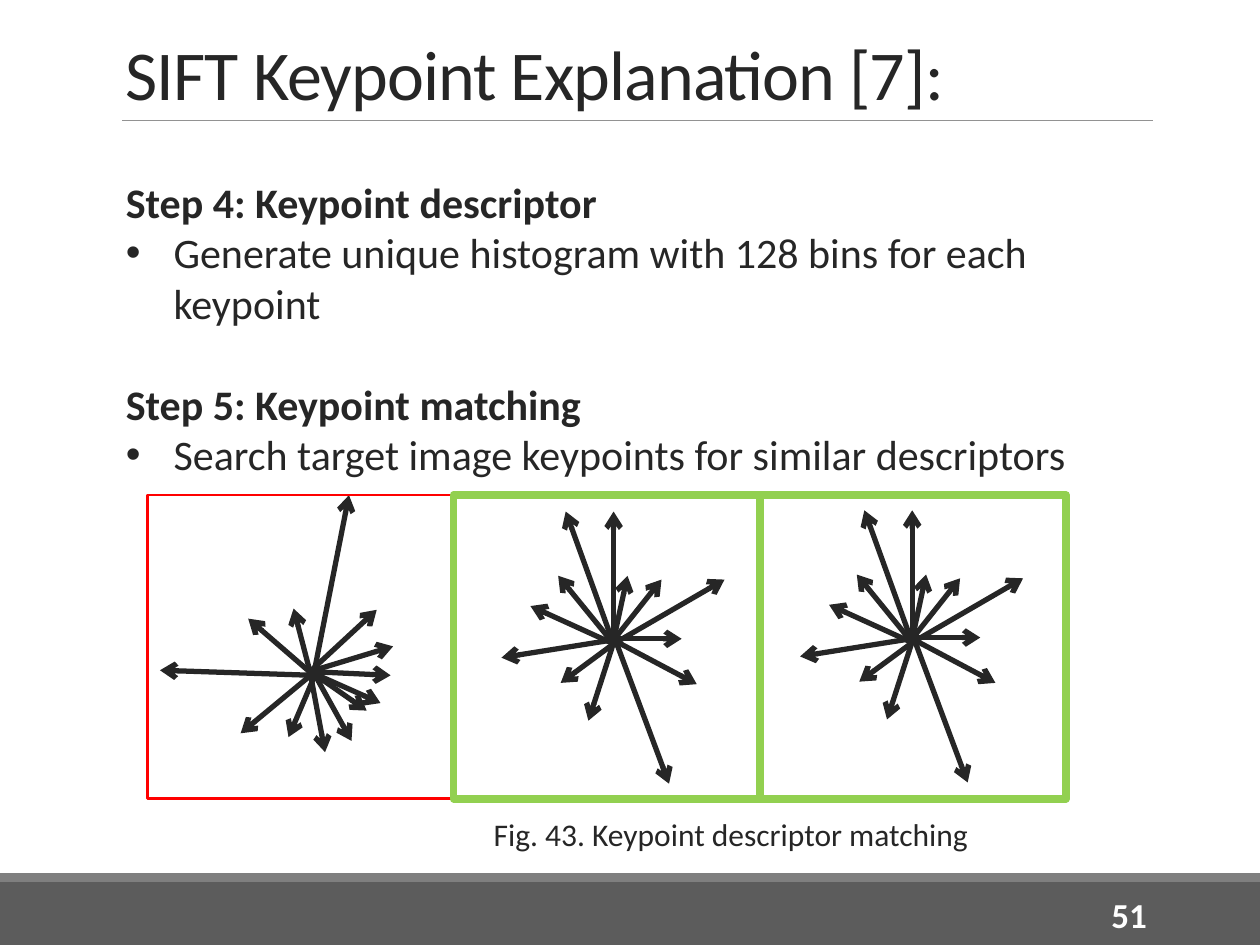
from lxml import etree
from pptx import Presentation, util as u
from pptx.dml.color import RGBColor
from pptx.enum import shapes, text
from pptx.oxml import ns

INK = RGBColor(0x26, 0x26, 0x26)
WHITE = RGBColor(0xFF, 0xFF, 0xFF)
BAR = RGBColor(0x5C, 0x5C, 0x5C)
STRIP = RGBColor(0x7F, 0x7F, 0x7F)
RULE = RGBColor(0x92, 0x92, 0x92)
RED = RGBColor(0xFF, 0x00, 0x00)
GREEN = RGBColor(0x92, 0xD0, 0x50)

LEFT_STAR = [
    (2.48, 5.34, 3.02, 5.58), (2.48, 5.34, 2.91, 5.64),
    (2.49, 5.34, 2.79, 5.88), (2.46, 5.33, 3.10, 5.36),
    (2.46, 5.33, 3.12, 5.13), (2.46, 5.33, 2.99, 4.84),
    (2.46, 5.33, 2.58, 5.97), (2.49, 5.34, 1.91, 5.82),
    (2.49, 5.38, 2.29, 5.85), (2.48, 5.40, 2.77, 3.93),
    (2.46, 5.33, 2.33, 4.83), (2.49, 5.36, 1.97, 4.91),
    (2.49, 5.36, 1.27, 5.32),
]
MATCH_STAR = [
    (4.87, 5.08, 4.87, 4.06), (4.87, 5.08, 4.98, 4.57),
    (4.87, 5.08, 5.25, 4.60), (4.87, 5.11, 4.49, 4.06),
    (4.87, 5.11, 4.43, 4.57), (4.87, 5.11, 4.21, 4.81),
    (4.87, 5.11, 5.75, 4.60), (4.87, 5.08, 5.53, 5.43),
    (4.90, 5.07, 5.41, 5.07), (4.92, 5.07, 3.98, 5.22),
    (4.87, 5.11, 4.45, 5.42), (4.88, 5.07, 4.67, 5.72),
    (4.88, 5.07, 5.31, 6.22),
]


class Deck:
    """Hold the style and the current slide, and draw each kind of element."""

    font = "Calibri"

    def __init__(self, slide):
        self.slide = slide

    def rect(self, x, y, w, h, fill=None, line=None, width=0):
        box = self.slide.shapes.add_shape(
            shapes.MSO_SHAPE.RECTANGLE, *map(u.Inches, (x, y, w, h)))
        box.shadow.inherit = False
        if fill is None:
            box.fill.background()
        else:
            box.fill.solid()
            box.fill.fore_color.rgb = fill
        if line is None:
            box.line.fill.background()
        else:
            box.line.color.rgb = line
            box.line.width = u.Pt(width)

    def line(self, ends, color, width, arrow=False, group=None):
        home = (group or self.slide).shapes
        link = home.add_connector(
            shapes.MSO_CONNECTOR.STRAIGHT, *map(u.Inches, ends))
        link.line.color.rgb = color
        link.line.width = u.Pt(width)
        if arrow:
            etree.SubElement(link.line._get_or_add_ln(),
                             ns.qn("a:tailEnd"), type="arrow")
        etree.SubElement(link._element.spPr, ns.qn("a:effectLst"))

    def star(self, rays, dx=0, dy=0):
        group = self.slide.shapes.add_group_shape()
        for x1, y1, x2, y2 in rays:
            self.line((x1 + dx, y1 + dy, x2 + dx, y2 + dy),
                      INK, 3, True, group)

    def text(self, x, y, w, h, words, size, color=INK, bold=False,
             anchor=text.MSO_ANCHOR.TOP):
        box = self.slide.shapes.add_textbox(*map(u.Inches, (x, y, w, h)))
        frame = box.text_frame
        frame.word_wrap = True
        frame.vertical_anchor = anchor
        frame.text = words
        for para in frame.paragraphs:
            for run in para.runs:
                run.font.name = self.font
                run.font.size = u.Pt(size)
                run.font.bold = bold
                run.font.color.rgb = color
        return frame.paragraphs

    def bullet(self, para):
        props = para._p.get_or_add_pPr()
        props.set("marL", str(u.Inches(0.38)))
        props.set("indent", str(-u.Inches(0.38)))
        etree.SubElement(props, ns.qn("a:buFont"), typeface="Arial")
        etree.SubElement(props, ns.qn("a:buChar"), char="•")


def main():
    show = Presentation()
    show.slide_width, show.slide_height = u.Inches(10), u.Inches(7.5)
    deck = Deck(show.slides.add_slide(show.slide_layouts[6]))

    deck.rect(0, 7, 10, 0.5, BAR)
    deck.rect(0, 6.93, 10, 0.07, STRIP)
    deck.line((0.97, 0.96, 9.15, 0.96), RULE, 0.5)

    title = deck.text(0.9, 0.23, 8.23, 0.73, "SIFT Keypoint Explanation [7]:",
                      40, anchor=text.MSO_ANCHOR.BOTTOM)[0]
    title.line_spacing = 0.85
    title.runs[0].font._element.set("spc", "-50")

    page = deck.text(8.12, 7.06, 1.08, 0.4, "51", 20, WHITE, True,
                     text.MSO_ANCHOR.MIDDLE)[0]
    page.alignment = text.PP_ALIGN.RIGHT

    steps = deck.text(0.9, 1.35, 7.96, 3.74, "\n".join((
        "Step 4: Keypoint descriptor",
        "Generate unique histogram with 128 bins for each keypoint",
        "Step 5: Keypoint matching",
        "Search target image keypoints for similar descriptors")), 24)
    for head, point in zip(steps[::2], steps[1::2]):
        head.runs[0].font.bold = True
        deck.bullet(point)
    steps[2].space_before = u.Pt(29)

    deck.text(3.82, 6.42, 4.35, 0.4, "Fig. 43. Keypoint descriptor matching", 18)

    deck.star(LEFT_STAR)
    deck.star(MATCH_STAR)
    deck.star(MATCH_STAR, 2.37, -0.01)
    frames = (RED, 1.5), (GREEN, 4.5), (GREEN, 4.5)
    for col, (color, width) in enumerate(frames):
        deck.rect(1.17 + 2.43 * col, 3.93, 2.43, 2.41, None, color, width)

    show.save("out.pptx")


if __name__ == "__main__":
    main()
